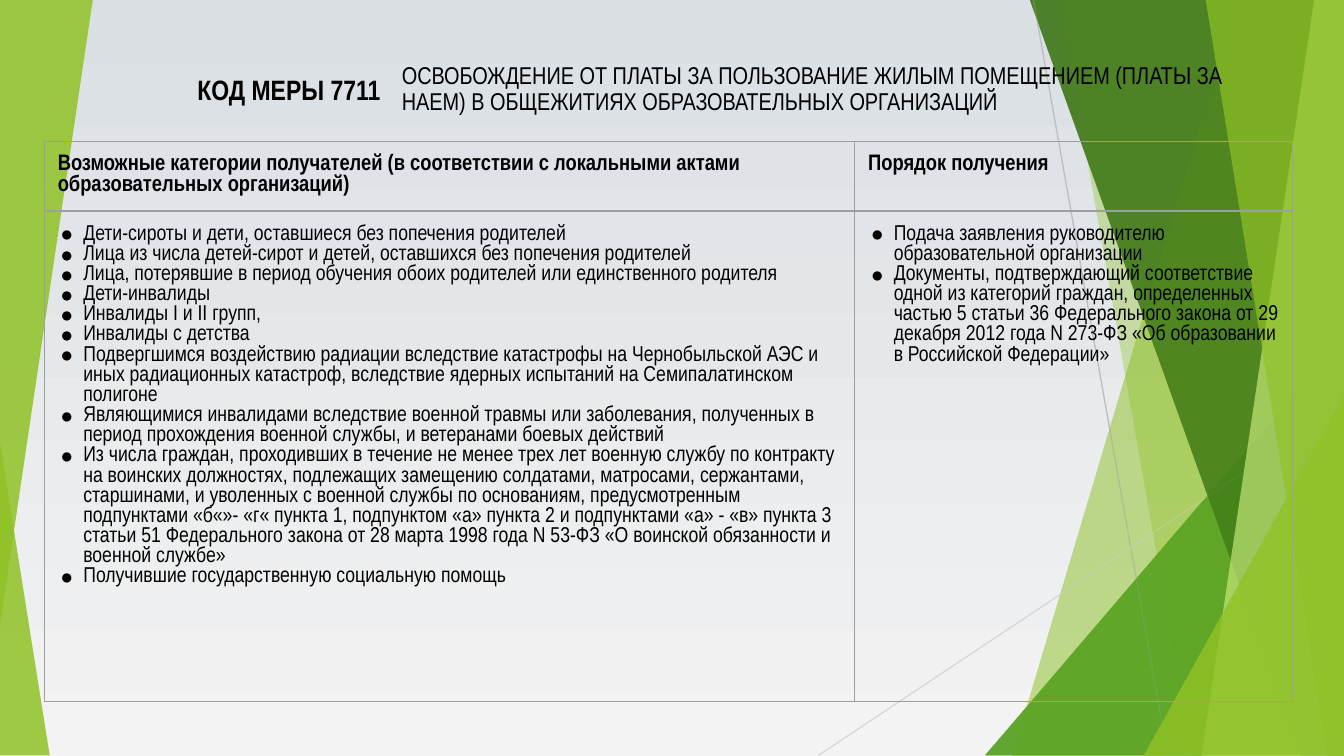
"""Build the slide on benefit code 7711: title, recipients table and green facets."""
import pptx
import pptx.dml.color
import pptx.enum.shapes
import pptx.enum.text
import pptx.oxml
import pptx.oxml.ns
import pptx.util
from pptx.util import Inches


def colour(value):
    """Turn a hex string into a colour."""
    return pptx.dml.color.RGBColor.from_string(value)


def write(frame, lines, size, inset, bold=False, bullet=False, **para_format):
    """Fill a text frame or a table cell with evenly formatted paragraphs."""
    margins = dict(zip(("margin_left", "margin_right", "margin_top", "margin_bottom"), inset))
    for name, value in margins.items():
        setattr(frame, name, Inches(value))
    body = getattr(frame, "text_frame", frame)
    body.word_wrap = True
    body.text = "\n".join(lines)
    for para in body.paragraphs:
        for name, value in para_format.items():
            setattr(para, name, value)
        font = para.runs[0].font
        font_format = {"name": "Arial Narrow", "size": pptx.util.Pt(size), "bold": bold}
        for name, value in font_format.items():
            setattr(font, name, value)
        font.color.rgb = colour("000000")
        if bullet:
            properties = para._p.get_or_add_pPr()
            properties.set("marL", str(Inches(0.19)))
            properties.set("indent", str(Inches(-0.17)))
            for markup in ('<a:buClr {}><a:srgbClr val="000000"/></a:buClr>',
                           '<a:buFont {} typeface="Arial"/>',
                           '<a:buChar {} char="●"/>'):
                properties.append(pptx.oxml.parse_xml(markup.format(pptx.oxml.ns.nsdecls("a"))))


namespace = pptx.oxml.ns.nsdecls("a")
width, top = 10, -0.01
height = width * 9 / 16

deck = pptx.Presentation()
deck.slide_width, deck.slide_height = Inches(width), Inches(height)
page = deck.slides.add_slide(deck.slide_layouts[5])
shapes = page.shapes

backdrop = page.background.fill
backdrop.gradient()
backdrop.gradient_angle = 270
for stop, value in zip(backdrop.gradient_stops, ("DADFE4", "F3F3F3")):
    stop.color.rgb = colour(value)

right_facets = [
    ("band", (9.21, 7.53), "90C226", 30),
    ("band", (7.88, 8.87), "90C226", 20),
    ("triangle", (7.33, 2.5, 2.67, 3.12, 1, 0), "54A021", 72),
    ("band", (7.66, 9.68), "3F7819", 70),
    ("band", (9.78, 8.94), "C0E474", 70),
    ("band", (8.97, 9.88), "90C226", 65),
    ("triangle", (8.51, 2.94, 1.49, 2.68, 1, 0), "90C226", 80),
]
lower_left = ("triangle", (0, 3.29, 0.37, 2.33, 0, 0), "90C226", 85)
upper_left = ("triangle", (0, 0, 0.69, 4.65, 1, 180), "90C226", 85)
rays = [
    ("ray", (7.69, 0, 8.69, 5.63), "BFBFBF", 100),
    ("ray", (10, 3.02, 6.09, 5.62), "D9D9D9", 100),
]

for kind, geometry, value, opacity in [*right_facets, lower_left, *rays, *right_facets, upper_left]:
    if kind == "ray":
        ray = shapes.add_connector(
            pptx.enum.shapes.MSO_CONNECTOR.STRAIGHT, *[Inches(number) for number in geometry])
        ray.line.color.rgb = colour(value)
        ray.line.width = pptx.util.Pt(0.75)
        ray.element.spPr.append(pptx.oxml.parse_xml(f"<a:effectLst {namespace}/>"))
        continue
    if kind == "band":
        upper, lower = geometry
        builder = shapes.build_freeform(Inches(upper), Inches(top))
        corners = [(width, top), (width, height), (lower, height)]
        builder.add_line_segments([(Inches(x), Inches(y)) for x, y in corners])
        facet = builder.convert_to_shape()
    else:
        *bounds, apex, turn = geometry
        facet = shapes.add_shape(
            pptx.enum.shapes.MSO_SHAPE.ISOSCELES_TRIANGLE, *[Inches(number) for number in bounds])
        facet.adjustments[0] = apex
        facet.rotation = turn
    facet.shadow.inherit = False
    facet.line.fill.background()
    facet.fill.solid()
    facet.fill.fore_color.rgb = colour(value)
    tint = facet.element.spPr.find(pptx.oxml.ns.qn("a:solidFill"))[0]
    tint.append(pptx.oxml.parse_xml(f'<a:alpha {namespace} val="{opacity * 1000}"/>'))

code_box = shapes.add_textbox(Inches(0.82), Inches(0.28), Inches(2.11), Inches(0.77))
code_box.text_frame.vertical_anchor = pptx.enum.text.MSO_ANCHOR.MIDDLE
write(code_box.text_frame, ["КОД МЕРЫ 7711"], 15, [0.1] * 4, bold=True,
      alignment=pptx.enum.text.PP_ALIGN.RIGHT)

recipients = [
    "Дети-сироты и дети, оставшиеся без попечения родителей",
    "Лица из числа детей-сирот и детей, оставшихся без попечения родителей",
    "Лица, потерявшие в период обучения обоих родителей или единственного родителя",
    "Дети-инвалиды",
    "Инвалиды I и II групп,",
    "Инвалиды с детства",
    "Подвергшимся воздействию радиации вследствие катастрофы на Чернобыльской АЭС и иных "
    "радиационных катастроф, вследствие ядерных испытаний на Семипалатинском полигоне",
    "Являющимися инвалидами вследствие военной травмы или заболевания, полученных в период "
    "прохождения военной службы, и ветеранами боевых действий",
    "Из числа граждан, проходивших в течение не менее трех лет военную службу по контракту на "
    "воинских должностях, подлежащих замещению солдатами, матросами, сержантами, старшинами, и "
    "уволенных с военной службы по основаниям, предусмотренным подпунктами «б«»- «г« пункта 1, "
    "подпунктом «а» пункта 2 и подпунктами «а» - «в» пункта 3 статьи 51 Федерального закона от "
    "28 марта 1998 года N 53-ФЗ «О воинской обязанности и военной службе»",
    "Получившие государственную социальную помощь",
]
procedure = [
    "Подача заявления руководителю образовательной организации",
    "Документы, подтверждающий соответствие одной из категорий граждан, определенных частью 5 "
    "статьи 36 Федерального закона от 29 декабря 2012 года N 273-ФЗ «Об образовании в "
    "Российской Федерации»",
]
headings = [
    ["Возможные категории получателей (в соответствии с локальными актами образовательных организаций)"],
    ["Порядок получения"],
]

table_frame = shapes.add_table(2, 2, Inches(0.33), Inches(1.05), Inches(9.29), Inches(4.25))
table = table_frame.table
table.first_row = table.horz_banding = False
for column, size in zip(table.columns, (6.03, 3.26)):
    column.width = Inches(size)
for row, size in zip(table.rows, (0.38, 3.65)):
    row.height = Inches(size)
table_frame.height = Inches(4.25)
row_formats = [
    {"size": 12, "inset": [0.1, 0.1, 0.1, 0.02], "bold": True},
    {"size": 11.5, "inset": [0.1, 0.09, 0.1, 0.1], "bullet": True},
]
for row, contents, row_format in zip(table.rows, [headings, [recipients, procedure]], row_formats):
    for cell, lines in zip(row.cells, contents):
        write(cell, lines, **row_format)
        cell_properties = cell._tc.get_or_add_tcPr()
        for side in "LRTB":
            cell_properties.append(pptx.oxml.parse_xml(
                f'<a:ln{side} {namespace} w="9525"><a:solidFill><a:srgbClr val="9E9E9E"/>'
                f'</a:solidFill></a:ln{side}>'))
        cell.fill.background()

title = shapes.title
title_place = {"left": 2.92, "top": 0.28, "width": 6.3, "height": 0.77}
for name, value in title_place.items():
    setattr(title, name, Inches(value))
title.text_frame.auto_size = pptx.enum.text.MSO_AUTO_SIZE.NONE
title.text_frame.vertical_anchor = pptx.enum.text.MSO_ANCHOR.MIDDLE
write(title.text_frame,
      ["ОСВОБОЖДЕНИЕ ОТ ПЛАТЫ ЗА ПОЛЬЗОВАНИЕ ЖИЛЫМ ПОМЕЩЕНИЕМ (ПЛАТЫ ЗА НАЕМ) "
       "В ОБЩЕЖИТИЯХ ОБРАЗОВАТЕЛЬНЫХ ОРГАНИЗАЦИЙ"],
      13, [0.07, 0.07, 0.04, 0.04], alignment=pptx.enum.text.PP_ALIGN.LEFT, line_spacing=0.9)
title.element.getparent().append(title.element)

deck.save("out.pptx")
